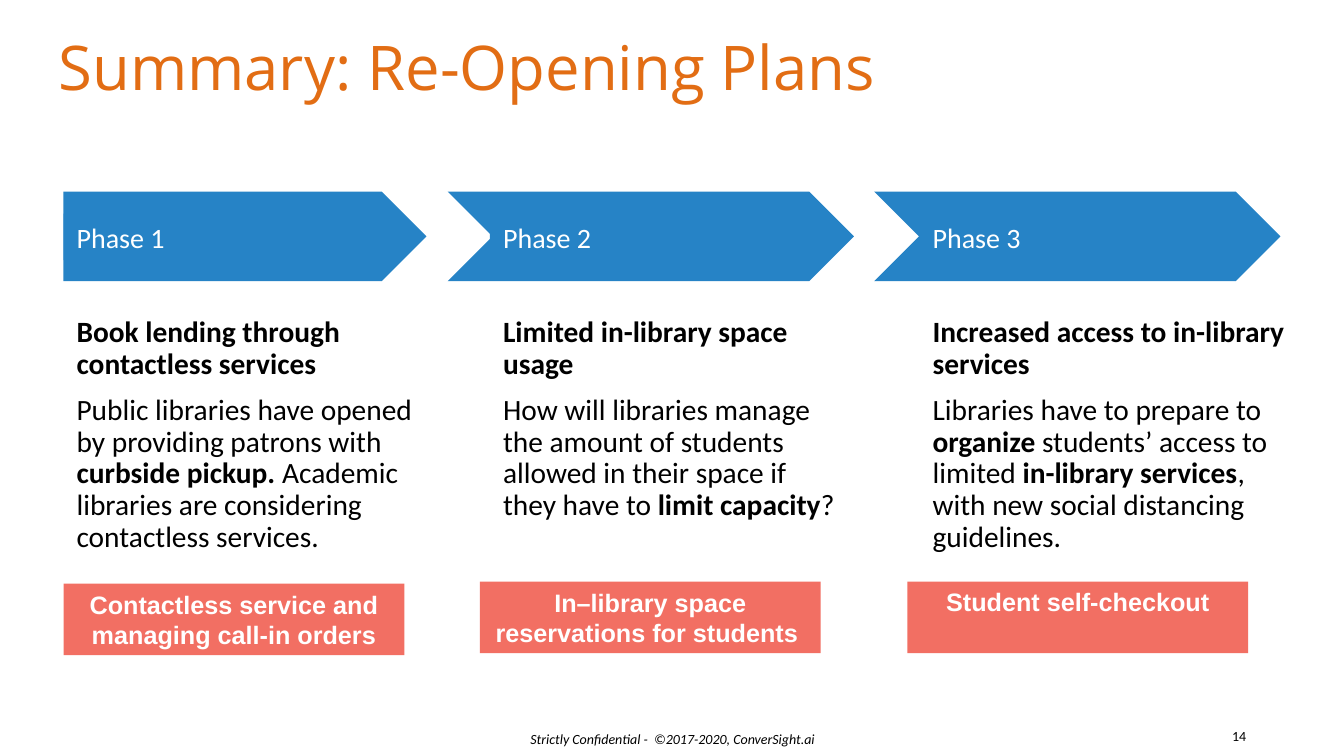
"""Build the re-opening plans summary slide with three phases."""
from lxml.etree import SubElement
from pptx import Presentation
from pptx.dml.color import RGBColor
from pptx.enum.shapes import MSO_SHAPE as SHAPE
from pptx.enum.text import MSO_ANCHOR as ANCHOR, MSO_AUTO_SIZE as FIT, PP_ALIGN as ALIGN
from pptx.oxml.ns import qn
from pptx.util import Pt

PX = 9144
COLORS = {"title": "E26D14", "phase": "2683C6", "banner": "F26F63", "text": "000000", "light": "FFFFFF"}


def box(*lengths):
    return [length * PX for length in lengths]


def write(shape, paragraphs, size, font, color, inset=13, anchor=ANCHOR.TOP,
          align=ALIGN.LEFT, spacing=1.0, italic=False, wrap=True):
    frame = shape.text_frame
    frame.auto_size = FIT.NONE
    frame.word_wrap = wrap
    frame.vertical_anchor = anchor
    frame.margin_left = frame.margin_top = frame.margin_right = frame.margin_bottom = inset * PX
    for index, pieces in enumerate(paragraphs):
        paragraph = frame.add_paragraph() if index else frame.paragraphs[0]
        paragraph.alignment = align
        paragraph.line_spacing = spacing
        paragraph.space_before = Pt(10 if index else 0)
        for words, bold in pieces:
            run = paragraph.add_run()
            run.text = words
            run.font.size = Pt(size)
            run.font.name = font
            run.font.bold = bold
            run.font.italic = italic
            run.font.color.rgb = RGBColor.from_string(COLORS[color])


prs = Presentation()
prs.slide_width, prs.slide_height = box(1333, 750)
slide = prs.slides.add_slide(prs.slide_layouts[1])
shapes = slide.shapes

title = shapes.title
title.left, title.top, title.width, title.height = box(45, 24, 1242, 103)
write(title, [[("Summary: Re-Opening Plans", False)]], 44, "Open Sans", "title", spacing=0.9)

first_label = slide.placeholders[1]
first_label.left, first_label.top, first_label.width, first_label.height = box(63, 212, 329, 46)
properties = first_label.text_frame.paragraphs[0]._p.get_or_add_pPr()
properties.set("marL", "0")
properties.set("indent", "0")
SubElement(properties, qn("a:buNone"))

phases = [
    (SHAPE.PENTAGON, 63, 360, 63, 360, 63, 579, ANCHOR.MIDDLE,
     "Book lending through contactless services",
     [("Public libraries have opened by providing patrons with ", False),
      ("curbside pickup. ", True),
      ("Academic libraries are considering contactless services.", False)],
     "Contactless service and managing call-in orders"),
    (SHAPE.CHEVRON, 444, 403, 486, 360, 476, 577, ANCHOR.MIDDLE,
     "Limited in-library space usage",
     [("How will libraries manage the amount of students allowed in their space if they have to ", False),
      ("limit capacity", True),
      ("?", False)],
     "In–library space reservations for students "),
    (SHAPE.CHEVRON, 867, 403, 912, 384, 900, 577, ANCHOR.TOP,
     "Increased access to in-library services",
     [("Libraries have to prepare to ", False),
      ("organize ", True),
      ("students’ access to limited ", False),
      ("in-library services", True),
      (", with new social distancing guidelines.", False)],
     "Student self-checkout"),
]

for number, (outline, arrow_left, arrow_width, text_left, text_width, banner_left, banner_top,
             banner_anchor, heading, details, service) in enumerate(phases, 1):
    arrow = shapes.add_shape(outline, *box(arrow_left, 190, arrow_width, 89))
    banner = shapes.add_shape(SHAPE.RECTANGLE, *box(banner_left, banner_top, 338, 71))
    for block, color in ((arrow, "phase"), (banner, "banner")):
        block.shadow.inherit = False
        block.fill.solid()
        block.fill.fore_color.rgb = RGBColor.from_string(COLORS[color])
        block.line.fill.background()
    write(banner, [[(service, True)]], 18, "Arial", "light", inset=5,
          anchor=banner_anchor, align=ALIGN.CENTER)

    label = first_label if number == 1 else shapes.add_textbox(*box(text_left, 212, 329, 46))
    label.fill.solid()
    label.fill.fore_color.rgb = RGBColor.from_string(COLORS["phase"])
    arrow.element.addnext(label.element)
    write(label, [[(f"Phase {number}", False)]], 20, "Calibri", "light", anchor=ANCHOR.MIDDLE)

    description = shapes.add_textbox(*box(text_left, 302, text_width, 387))
    write(description, [[(heading, True)], details], 21, "Calibri", "text", spacing=0.9)

footer = shapes.add_textbox(*box(461, 721, 412, 25))
write(footer, [[("Strictly Confidential -  ©2017-2020, ConverSight.ai", False)]], 10, "Calibri", "text",
      inset=5, anchor=ANCHOR.MIDDLE, align=ALIGN.CENTER, italic=True)
page_number = shapes.add_textbox(*box(1216, 718, 25, 25))
write(page_number, [[("14", False)]], 10, "Calibri", "text",
      inset=5, anchor=ANCHOR.MIDDLE, align=ALIGN.RIGHT, wrap=False)

prs.save("out.pptx")
